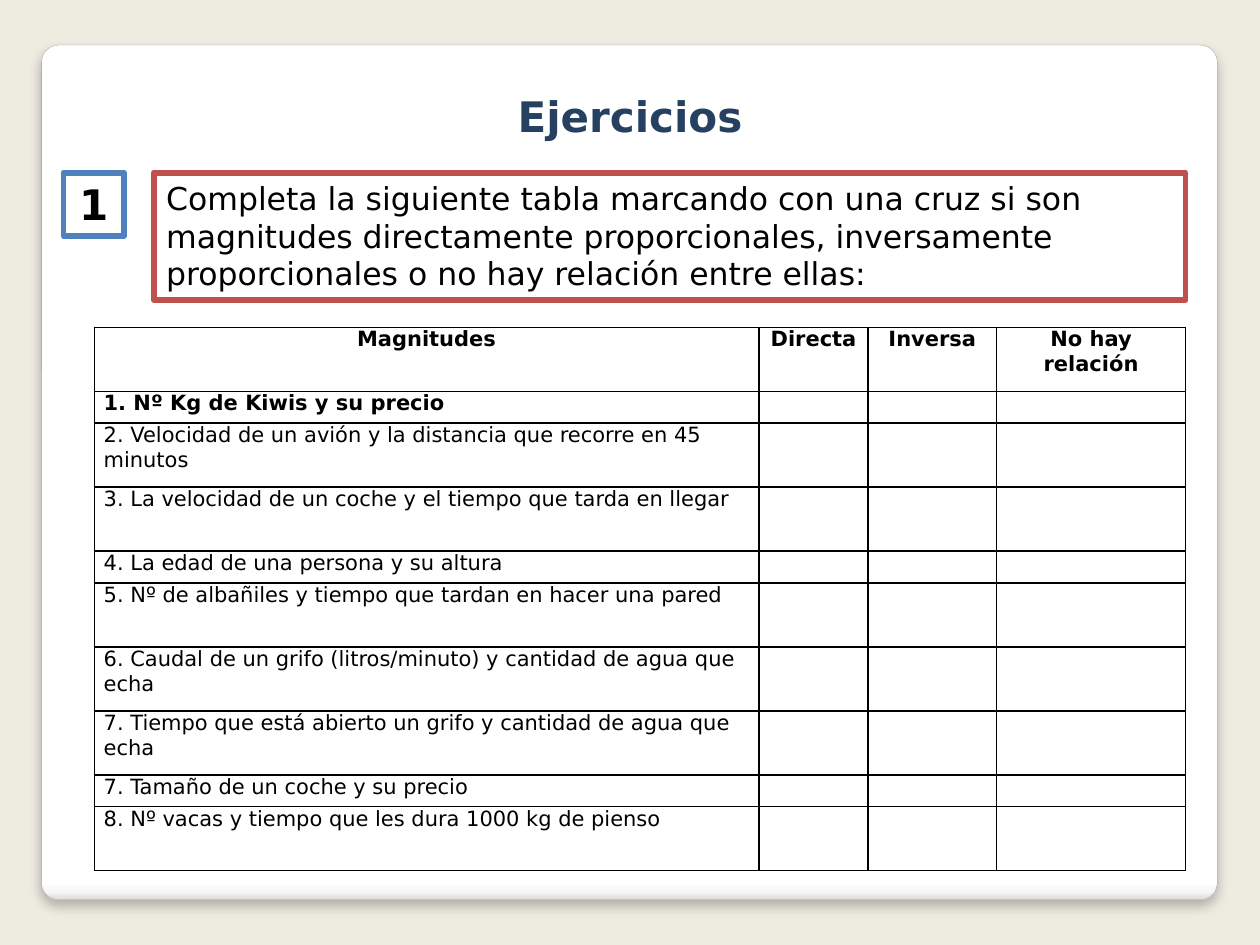
from dataclasses import dataclass

from lxml import etree
from pptx import Presentation
from pptx import util as u
from pptx.dml.color import RGBColor
from pptx.enum import shapes, text
from pptx.oxml.ns import qn


@dataclass(frozen=True)
class Theme:
    font: str = "DejaVu Sans"
    background: str = "EEECE1"
    paper: str = "FFFFFF"
    ink: str = "000000"
    title: str = "254061"
    blue: str = "4F81BD"
    red: str = "C0504D"
    card_line: str = "A4A4A4"
    card_stops: tuple = ((0, "FFFFFF"), (98, "FFFFFF"), (99, "F7F7F7"), (100, "DADADA"))
    heading_size: int = 24
    body_size: int = 18
    table_size: int = 12
    box_line: float = 3.35


def add_xml(parent, tag, **attributes):
    return etree.SubElement(parent, qn(tag), attributes)


class SlideBuilder:
    def __init__(self, slide, theme):
        self.slide = slide
        self.theme = theme
        slide.background.fill.solid()
        slide.background.fill.fore_color.rgb = RGBColor.from_string(theme.background)

    def format_paragraph(self, paragraph, size, color, bold=False, centered=False):
        paragraph.alignment = text.PP_ALIGN.CENTER if centered else text.PP_ALIGN.LEFT
        for run in paragraph.runs:
            run.font.name = self.theme.font
            run.font.size = u.Pt(size)
            run.font.bold = bold
            run.font.color.rgb = RGBColor.from_string(color)

    def add_outlined(self, kind, left, top, width, height, line, line_width):
        shape = self.slide.shapes.add_shape(
            kind, u.Cm(left), u.Cm(top), u.Cm(width), u.Cm(height))
        shape.shadow.inherit = False
        shape.line.color.rgb = RGBColor.from_string(line)
        shape.line.width = u.Pt(line_width)
        return shape

    def add_card(self, left, top, width, height):
        card = self.add_outlined(shapes.MSO_SHAPE.ROUNDED_RECTANGLE, left, top, width,
                                 height, self.theme.card_line, 0.16)
        card.adjustments[0] = 0.02
        card.fill.gradient()
        card.fill.gradient_angle = 270
        properties = card._element.spPr
        stops = properties.find(".//" + qn("a:gsLst"))
        for stop in list(stops):
            stops.remove(stop)
        for position, color in self.theme.card_stops:
            stop = add_xml(stops, "a:gs", pos=str(position * 1000))
            add_xml(stop, "a:srgbClr", val=color)
        shadow = add_xml(properties.find(qn("a:effectLst")), "a:outerShdw",
                         blurRad=str(u.Pt(6)), dist=str(u.Pt(4)), dir="5400000",
                         algn="t", rotWithShape="0")
        add_xml(add_xml(shadow, "a:srgbClr", val=self.theme.ink), "a:alpha", val="25000")
        self.slide.shapes._spTree.insert(2, card._element)

    def add_title(self, words, left, top, width, height):
        title = self.slide.shapes.title
        title.left, title.top = u.Cm(left), u.Cm(top)
        title.width, title.height = u.Cm(width), u.Cm(height)
        title.text_frame.text = words
        title.text_frame.word_wrap = True
        title.text_frame.auto_size = text.MSO_AUTO_SIZE.SHAPE_TO_FIT_TEXT
        self.format_paragraph(title.text_frame.paragraphs[0], self.theme.heading_size,
                              self.theme.title, bold=True, centered=True)

    def add_box(self, words, left, top, width, height, line, size, heading=False):
        box = self.add_outlined(shapes.MSO_SHAPE.RECTANGLE, left, top, width, height,
                                line, self.theme.box_line)
        box.fill.solid()
        box.fill.fore_color.rgb = RGBColor.from_string(self.theme.paper)
        frame = box.text_frame
        frame.text = words
        frame.word_wrap = True
        frame.vertical_anchor = text.MSO_ANCHOR.TOP
        frame.auto_size = text.MSO_AUTO_SIZE.SHAPE_TO_FIT_TEXT
        self.format_paragraph(frame.paragraphs[0], size, self.theme.ink,
                              bold=heading, centered=heading)

    def format_cell(self, cell, words, bold, header):
        cell.margin_left = cell.margin_right = u.Cm(0.19)
        cell.margin_top = cell.margin_bottom = 0
        cell.fill.background()
        properties = cell._tc.get_or_add_tcPr()
        for index, side in enumerate(("a:lnL", "a:lnR", "a:lnT", "a:lnB")):
            border = etree.Element(qn(side), w=str(u.Pt(1)))
            add_xml(add_xml(border, "a:solidFill"), "a:srgbClr", val=self.theme.ink)
            properties.insert(index, border)
        paragraph = cell.text_frame.paragraphs[0]
        if not words:
            add_xml(paragraph._p, "a:endParaRPr", sz=str(self.theme.table_size * 100))
            return
        paragraph.text = words
        self.format_paragraph(paragraph, self.theme.table_size, self.theme.ink,
                              bold=bold, centered=header)
        if not header:
            paragraph.space_before = paragraph.space_after = u.Pt(3)

    def add_table(self, headers, magnitudes, left, top, widths, heights):
        table = self.slide.shapes.add_table(
            len(heights), len(widths), u.Cm(left), u.Cm(top),
            u.Cm(sum(widths)), u.Cm(sum(heights))).table
        table.first_row = table.horz_banding = False
        for column, width in zip(table.columns, widths):
            column.width = u.Cm(width)
        blanks = [""] * (len(headers) - 1)
        rows = [headers] + [[magnitude] + blanks for magnitude in magnitudes]
        for index, (row, height, words) in enumerate(zip(table.rows, heights, rows)):
            row.height = u.Cm(height)
            for cell, label in zip(row.cells, words):
                self.format_cell(cell, label, bold=index < 2, header=index == 0)


def main():
    theme = Theme()
    presentation = Presentation()
    presentation.slide_width, presentation.slide_height = u.Cm(25.4), u.Cm(19.05)
    slide = presentation.slides.add_slide(presentation.slide_layouts[5])
    builder = SlideBuilder(slide, theme)

    builder.add_card(0.84, 0.91, 23.7, 18.14 - 0.91)
    builder.add_title("Ejercicios", 0.99, 1.7, 23.42, 1.27)
    builder.add_box(
        "Completa la siguiente tabla marcando con una cruz si son magnitudes "
        "directamente proporcionales, inversamente proporcionales o no hay "
        "relación entre ellas:",
        3.1, 3.48, 20.8, 2.57, theme.red, theme.body_size)
    builder.add_box("1", 1.28, 3.48, 1.22, 1.28, theme.blue, theme.heading_size,
                    heading=True)

    single, double = 0.64, 1.29
    builder.add_table(
        ["Magnitudes", "Directa", "Inversa", "No hay relación"],
        ["1. Nº Kg de Kiwis y su precio",
         "2. Velocidad de un avión y la distancia que recorre en 45 minutos",
         "3. La velocidad de un coche y el tiempo que tarda en llegar",
         "4. La edad de una persona y su altura",
         "5. Nº de albañiles y tiempo que tardan en hacer una pared",
         "6. Caudal de un grifo (litros/minuto) y cantidad de agua que echa",
         "7. Tiempo que está abierto un grifo y cantidad de agua que echa",
         "7. Tamaño de un coche y su precio",
         "8. Nº vacas y tiempo que les dura 1000 kg de pienso"],
        1.9, 6.6, [13.4, 2.2, 2.59, 3.81],
        [double, single, double, double, single, double, double, double, single, double])

    presentation.save("out.pptx")


if __name__ == "__main__":
    main()
